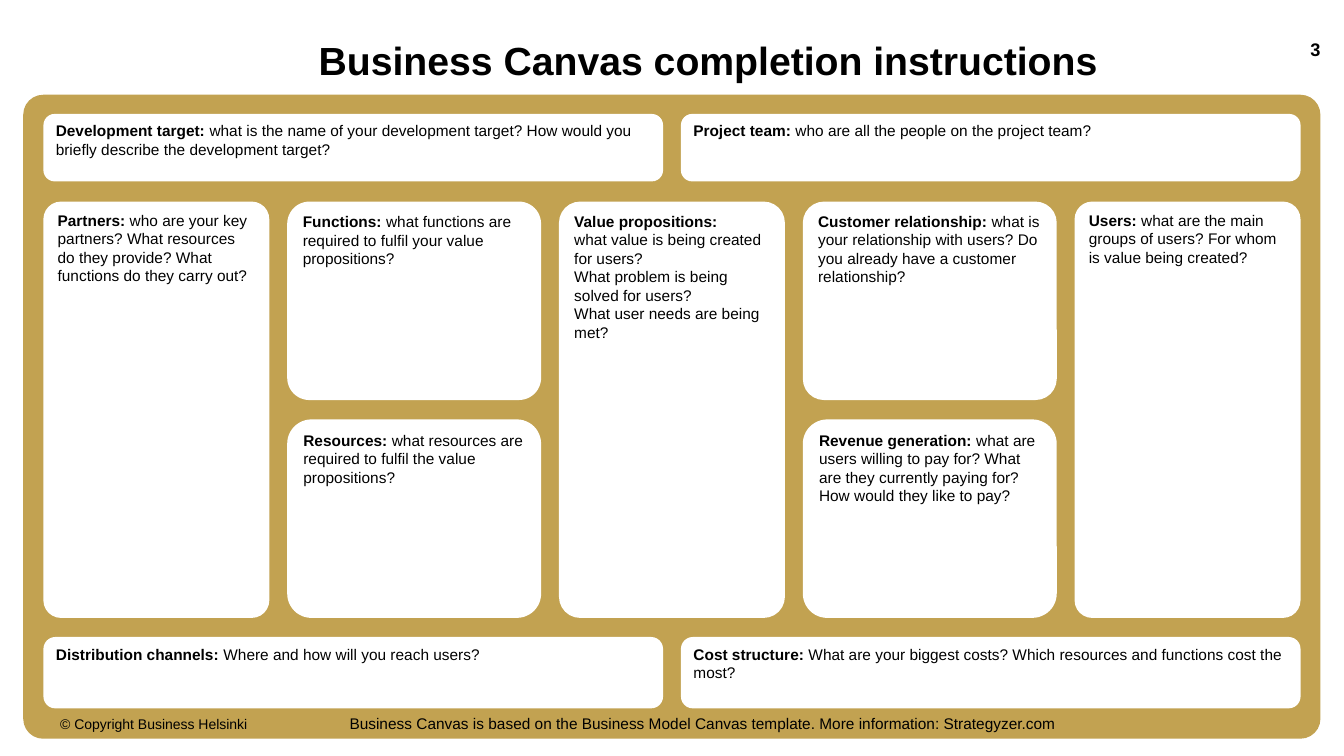
from pptx import Presentation
from pptx.dml.color import RGBColor
from pptx.enum.shapes import MSO_SHAPE
from pptx.enum.text import MSO_ANCHOR, MSO_AUTO_SIZE, PP_ALIGN
from pptx.util import Pt

ROUNDED = MSO_SHAPE.ROUNDED_RECTANGLE
TOP, MIDDLE = MSO_ANCHOR.TOP, MSO_ANCHOR.MIDDLE
LEFT, CENTER, RIGHT = PP_ALIGN.LEFT, PP_ALIGN.CENTER, PP_ALIGN.RIGHT
NO_FIT = MSO_AUTO_SIZE.NONE
GOLD, WHITE, BLACK = "C2A251", "FFFFFF", "000000"


def color(hex_value):
    return RGBColor.from_string(hex_value)


def add_panel(left, top, width, height, radius, fill):
    panel = slide.shapes.add_shape(ROUNDED, Pt(left), Pt(top), Pt(width), Pt(height))
    panel.adjustments[0] = radius
    panel.shadow.inherit = False
    panel.fill.solid()
    panel.fill.fore_color.rgb = color(fill)
    panel.line.fill.background()
    return panel


prs = Presentation()
prs.slide_width, prs.slide_height = Pt(960), Pt(540)
slide = prs.slides.add_slide(prs.slide_layouts[5])

add_panel(16.6, 67.7, 926.6, 460, 0.031, GOLD)

gap = 12.75
side, inner = 161.4, 181.4
partners_x = 31
functions_x = partners_x + side + gap
value_x = functions_x + inner + gap
customer_x = value_x + side + gap
users_x = customer_x + inner + gap
half = (users_x + side - partners_x - gap) / 2
right_x = partners_x + half + gap

header_y, header_height = 81.4, 48.2
upper_y, tall = 144, 297.4
row_gap = 13.8
short = (tall - row_gap) / 2
lower_y = upper_y + short + row_gap
footer_y, footer_height = 455, 51

sections = [
    (partners_x, header_y, half, header_height, 0.167, "Development target:",
     [" what is the name of your development target? How would you briefly describe the development target?"]),
    (right_x, header_y, half, header_height, 0.167, "Project team:",
     [" who are all the people on the project team?"]),
    (partners_x, upper_y, side, tall, 0.078, "Partners:",
     [" who are your key partners? What resources do they provide? What functions do they carry out?"]),
    (functions_x, upper_y, inner, short, 0.112, "Functions:",
     [" what functions are required to fulfil your value propositions?"]),
    (functions_x, lower_y, inner, short, 0.122, "Resources:",
     [" what resources are required to fulfil the value propositions?"]),
    (value_x, upper_y, side, tall, 0.094, "Value propositions:",
     ["", "what value is being created for users?",
      "What problem is being solved for users?", "What user needs are being met?"]),
    (customer_x, upper_y, inner, short, 0.107, "Customer relationship:",
     [" what is your relationship with users? Do you already have a customer relationship?"]),
    (customer_x, lower_y, inner, short, 0.123, "Revenue generation:",
     [" what are users willing to pay for? What are they currently paying for? How would they like to pay?"]),
    (users_x, upper_y, side, tall, 0.078, "Users:",
     [" what are the main groups of users? For whom is value being created?"]),
    (partners_x, footer_y, half, footer_height, 0.167, "Distribution channels:",
     [" Where and how will you reach users?"]),
    (right_x, footer_y, half, footer_height, 0.167, "Cost structure:",
     [" What are your biggest costs? Which resources and functions cost the most?"]),
]

for left, top, width, height, radius, heading, questions in sections:
    frame = add_panel(left, top, width, height, radius, WHITE).text_frame
    frame.word_wrap = True
    frame.vertical_anchor = TOP
    frame.margin_left = Pt(6.5)
    frame.margin_right = Pt(9 if width == half else 7.2)
    frame.margin_top = Pt(3)
    for number, question in enumerate(questions):
        paragraph = frame.add_paragraph() if number else frame.paragraphs[0]
        paragraph.alignment = LEFT
        paragraph.font.size = Pt(11)
        paragraph.font.name = "Arial"
        paragraph.font.color.rgb = color(BLACK)
        if number == 0:
            label = paragraph.add_run()
            label.text = heading
            label.font.bold = True
        if question:
            paragraph.add_run().text = question

captions = [
    (239, 506.2, 526.3, 21.6, CENTER, 11, False,
     "Business Canvas is based on the Business Model Canvas template. More information: Strategyzer.com"),
    (23.8, 506.2, 172, 21.6, CENTER, 10, False, "© Copyright Business Helsinki"),
    (846, 25.2, 97.2, 20.2, RIGHT, 13, True, "3"),
]
for left, top, width, height, alignment, size, bold, wording in captions:
    frame = slide.shapes.add_textbox(Pt(left), Pt(top), Pt(width), Pt(height)).text_frame
    frame.word_wrap = True
    frame.vertical_anchor = MIDDLE
    frame.margin_left = frame.margin_right = frame.margin_top = frame.margin_bottom = 0
    paragraph = frame.paragraphs[0]
    paragraph.text = wording
    paragraph.alignment = alignment
    paragraph.font.size = Pt(size)
    paragraph.font.name = "Arial"
    paragraph.font.bold = bold
    paragraph.font.color.rgb = color(BLACK)

title = slide.shapes.title
title.left, title.top, title.width, title.height = Pt(206.6), Pt(25.9), Pt(598.3), Pt(44.6)
title.text_frame.auto_size = NO_FIT
title.text_frame.vertical_anchor = TOP
heading_line = title.text_frame.paragraphs[0]
heading_line.text = "Business Canvas completion instructions"
heading_line.alignment = CENTER
heading_line.line_spacing = 0.9
heading_line.font.size = Pt(28)
heading_line.font.name = "Arial"
heading_line.font.bold = True
heading_line.font.color.rgb = color(BLACK)

prs.save("out.pptx")
